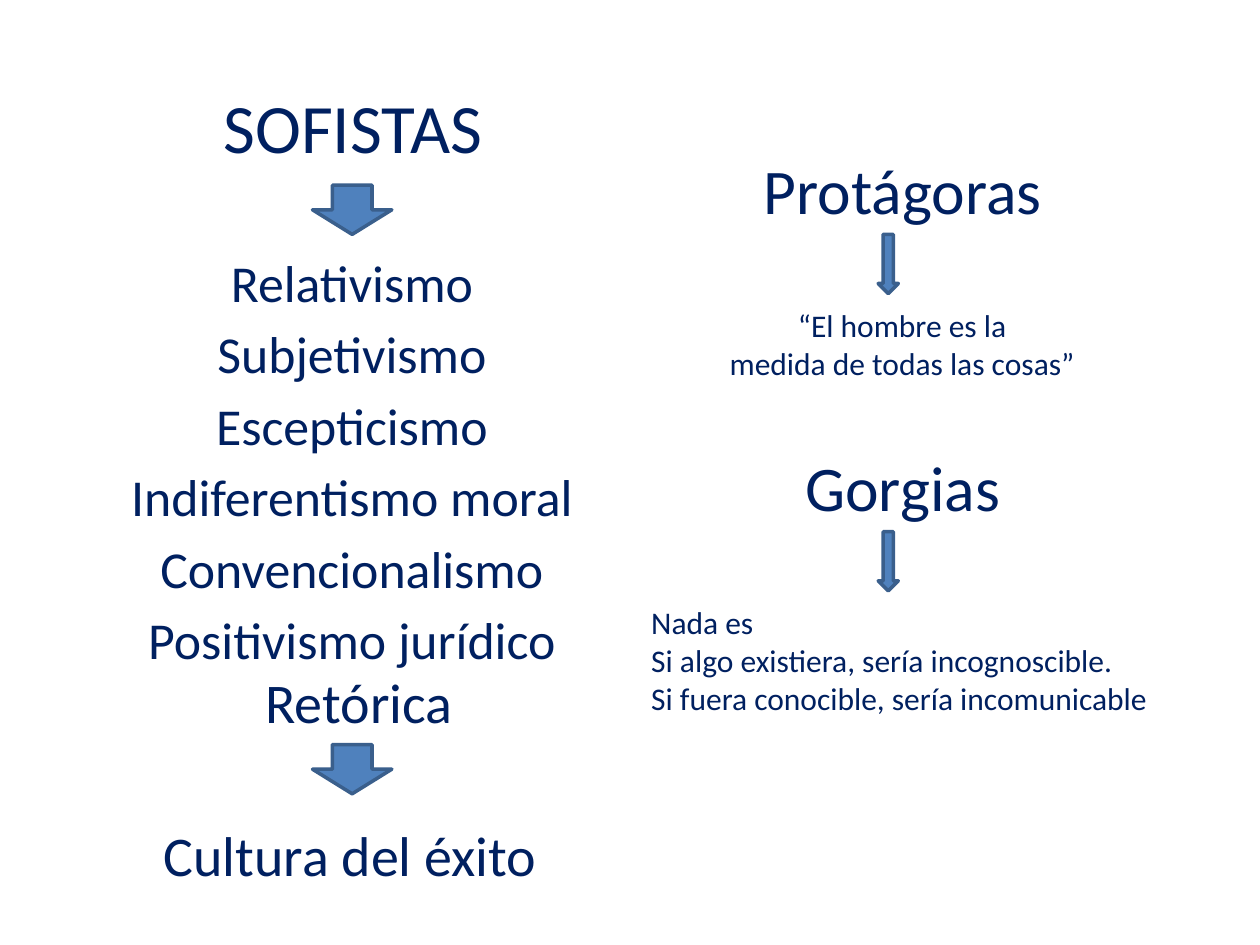
from pptx import Presentation
from pptx.dml.color import RGBColor
from pptx.enum.shapes import MSO_SHAPE
from pptx.enum.text import MSO_ANCHOR, MSO_AUTO_SIZE, PP_ALIGN
from pptx.util import Inches, Pt

LEFT, CENTER = PP_ALIGN.LEFT, PP_ALIGN.CENTER
TOP, MIDDLE = MSO_ANCHOR.TOP, MSO_ANCHOR.MIDDLE
FIT_SHAPE, NO_FIT = MSO_AUTO_SIZE.SHAPE_TO_FIT_TEXT, MSO_AUTO_SIZE.NONE
RIGHT_ARROW, DOWN_ARROW = MSO_SHAPE.RIGHT_ARROW, MSO_SHAPE.DOWN_ARROW

DOCTRINES = ["Relativismo", "Subjetivismo", "Escepticismo",
             "Indiferentismo moral", "Convencionalismo", "Positivismo jurídico"]
PROTAGORAS_QUOTE = ["“El hombre es la", "medida de todas las cosas”"]
GORGIAS_THESES = ["Nada es", "Si algo existiera, sería incognoscible.",
                  "Si fuera conocible, sería incomunicable"]


def color(hex_code):
    return RGBColor.from_string(hex_code)


class SlideBuilder:
    font = "Calibri"
    ink = color("002060")
    arrow_fill = color("4F81BD")
    arrow_line = color("3A5F8C")

    def __init__(self, slide):
        self.slide = slide

    def set_lines(self, shape, lines, size, align, anchor=TOP, wrap=True,
                  space_before=0, line_spacing=1.0):
        """Fill a shape with one paragraph per line in the slide's text style."""
        frame = shape.text_frame
        frame.text = "\n".join(lines)
        frame.word_wrap = wrap
        frame.auto_size = NO_FIT if wrap else FIT_SHAPE
        frame.vertical_anchor = anchor
        for paragraph in frame.paragraphs:
            paragraph.alignment = align
            paragraph.space_before = Pt(space_before)
            paragraph.line_spacing = line_spacing
            for run in paragraph.runs:
                run.font.name = self.font
                run.font.size = Pt(size)
                run.font.color.rgb = self.ink

    def title(self, text, left, top, width, height):
        heading = self.slide.shapes.title
        heading.left, heading.top = Inches(left), Inches(top)
        heading.width, heading.height = Inches(width), Inches(height)
        self.set_lines(heading, [text], 39.6, CENTER, MIDDLE)

    def text(self, lines, left, top, width, height, size, align=LEFT, **style):
        box = self.slide.shapes.add_textbox(
            Inches(left), Inches(top), Inches(width), Inches(height))
        self.set_lines(box, lines, size, align, **style)

    def arrow(self, kind, left, top, width, height, rotation=0):
        arrow = self.slide.shapes.add_shape(
            kind, Inches(left), Inches(top), Inches(width), Inches(height))
        arrow.rotation = rotation
        arrow.shadow.inherit = False
        arrow.fill.solid()
        arrow.fill.fore_color.rgb = self.arrow_fill
        arrow.line.color.rgb = self.arrow_line
        arrow.line.width = Pt(2)

    def philosopher(self, name, top):
        """Add a philosopher's name with the thin arrow towards his thesis."""
        self.text([name], 5.55, top, 3.23, 0.63, 36.3, CENTER,
                  anchor=MIDDLE, line_spacing=0.8)
        self.arrow(DOWN_ARROW, 6.97, top + 0.62, 0.16, 0.47)


def main():
    presentation = Presentation()
    presentation.slide_width, presentation.slide_height = Inches(10), Inches(7.5)
    builder = SlideBuilder(
        presentation.slides.add_slide(presentation.slide_layouts[5]))

    builder.title("SOFISTAS", 0.91, 0.68, 3.78, 0.63)
    builder.text(DOCTRINES, 0.71, 1.94, 4.17, 3.31, 29.6, CENTER, space_before=5.3)
    builder.text(["Retórica"], 2.01, 5.25, 1.7, 0.64, 32, wrap=False)
    for arrow_top in (1.35, 5.79):
        builder.arrow(RIGHT_ARROW, 2.6, arrow_top, 0.39, 0.63, rotation=90)
    builder.text(["Cultura del éxito"], 1.2, 6.46, 3.2, 0.64, 32, wrap=False)

    builder.philosopher("Protágoras", 1.24)
    builder.text(PROTAGORAS_QUOTE, 5.67, 2.38, 2.98, 0.71, 18, CENTER, wrap=False)
    builder.philosopher("Gorgias", 3.6)
    builder.text(GORGIAS_THESES, 5.07, 4.74, 4.19, 1.01, 18, wrap=False)

    presentation.save("out.pptx")


if __name__ == "__main__":
    main()
